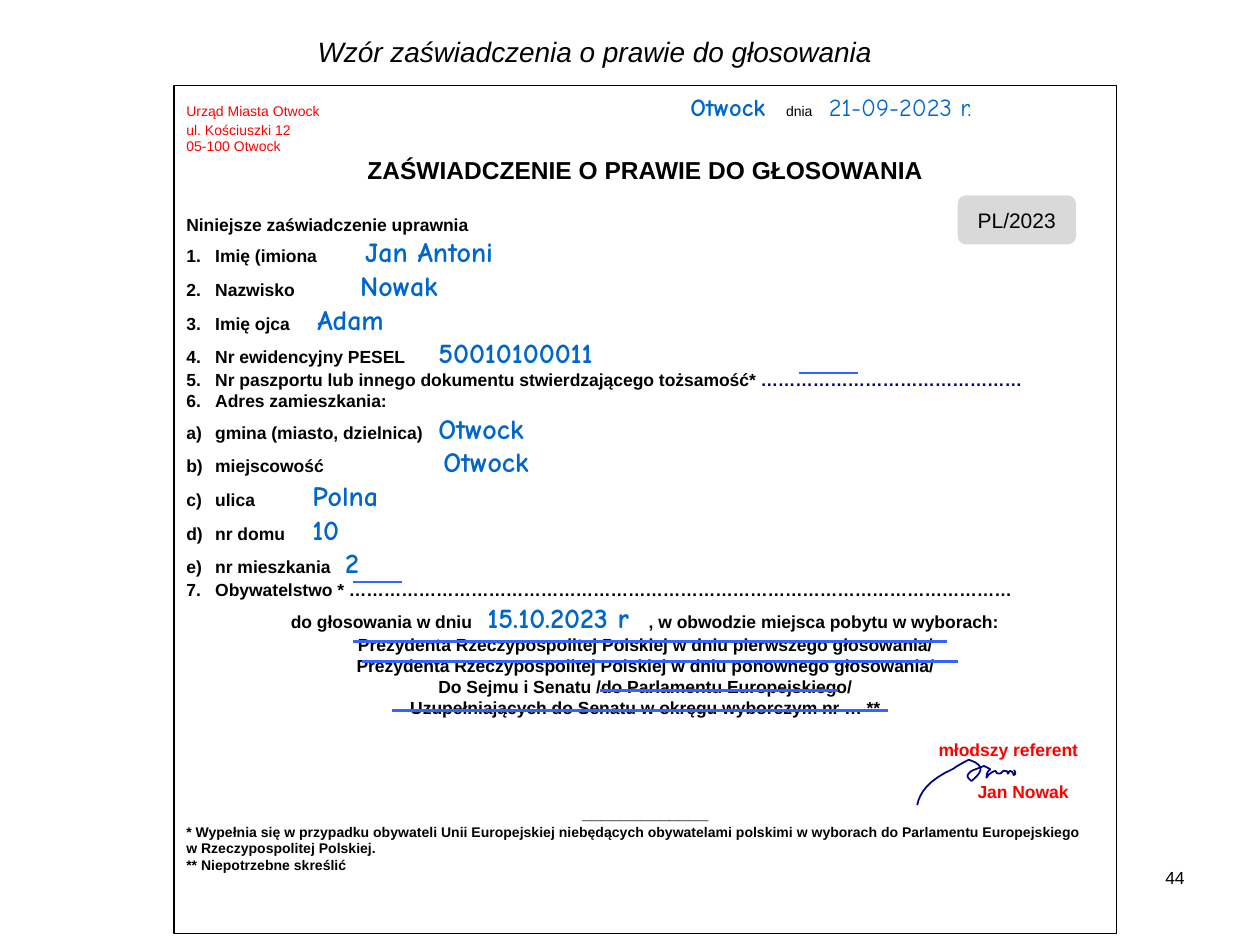
from dataclasses import dataclass

from lxml import etree
from pptx import Presentation
from pptx import util as u
from pptx.dml.color import RGBColor
from pptx.enum import shapes, text
from pptx.oxml import ns

BLACK = RGBColor(0x00, 0x00, 0x00)
RED = RGBColor(0xFF, 0x00, 0x00)
HANDWRITING = RGBColor(0x00, 0x66, 0xCC)
DOTS = RGBColor(0x00, 0x00, 0x99)
STRIKE = RGBColor(0x33, 0x66, 0xFF)
INK = RGBColor(0x00, 0x00, 0x80)
GREY = RGBColor(0xD9, 0xD9, 0xD9)
CENTER = text.PP_ALIGN.CENTER
LEFT = text.PP_ALIGN.LEFT
RIGHT = text.PP_ALIGN.RIGHT


@dataclass(frozen=True)
class Style:
    size: float
    color: RGBColor = BLACK
    bold: bool = False
    italic: bool = False
    font: str = "Arial"


@dataclass(frozen=True)
class Line:
    runs: tuple
    align: text.PP_ALIGN = LEFT
    tabs: tuple = ()
    number: str = ""
    start: int = 1
    before: float = 0


@dataclass(frozen=True)
class Strike:
    left: float
    right: float
    y: float
    width: float = 1.5


OFFICE = Style(8, RED)
SMALL = Style(8)
NOTE = Style(8, bold=True)
BODY = Style(10, bold=True)
STAMP = Style(10, RED, bold=True)
PLACE = Style(14, HANDWRITING, bold=True, font="Comic Neue")
DATE = Style(14, HANDWRITING, font="Comic Neue")
ENTRY = Style(16, HANDWRITING, bold=True, font="Comic Neue")
ARABIC, LETTER = "arabicPeriod", "alphaLcParenR"


def entry(number: str, label: str, value: str, tab: float) -> Line:
    return Line(((label + "\t", BODY), (value, ENTRY)), tabs=(tab,), number=number)


def centered(words: str) -> Line:
    return Line(((words, BODY),), CENTER)


CERTIFICATE = [
    Line((("Urząd Miasta Otwock\t", OFFICE), ("Otwock\t", PLACE),
          ("dnia\t", SMALL), ("21-09-2023 r.", DATE)), tabs=(4, 4.76, 5.1)),
    Line((("ul. Kościuszki 12", OFFICE),)),
    Line((("05-100 Otwock", OFFICE),)),
    Line((("ZAŚWIADCZENIE O PRAWIE DO GŁOSOWANIA", Style(14, bold=True)),), CENTER),
    Line((("Niniejsze zaświadczenie uprawnia", BODY),), before=17),
    entry(ARABIC, "Imię (imiona", "Jan Antoni", 1.42),
    entry(ARABIC, "Nazwisko", "Nowak", 1.38),
    entry(ARABIC, "Imię ojca", "Adam", 1.04),
    entry(ARABIC, "Nr ewidencyjny PESEL", "50010100011", 2),
    Line((("Nr paszportu lub innego dokumentu stwierdzającego tożsamość* ", BODY),
          ("…" * 15, Style(10, DOTS, bold=True))), number=ARABIC),
    Line((("Adres zamieszkania:", BODY),), number=ARABIC),
    entry(LETTER, "gmina (miasto, dzielnica)", "Otwock", 2),
    entry(LETTER, "miejscowość", "Otwock", 2.04),
    entry(LETTER, "ulica", "Polna", 1),
    entry(LETTER, "nr domu", "10", 1),
    entry(LETTER, "nr mieszkania", "2", 1.26),
    Line((("Obywatelstwo * " + "…" * 38, BODY),), number=ARABIC, start=7),
    Line((("\tdo głosowania w dniu\t", BODY), ("15.10.2023 r\t", ENTRY),
          (", w obwodzie miejsca pobytu w wyborach:", BODY)), tabs=(0.83, 2.39, 3.67)),
    centered("Prezydenta Rzeczypospolitej Polskiej w dniu pierwszego głosowania/"),
    centered("Prezydenta Rzeczypospolitej Polskiej w dniu ponownego głosowania/"),
    centered("Do Sejmu i Senatu /do Parlamentu Europejskiego/"),
    centered("Uzupełniających do Senatu w okręgu wyborczym nr … **"),
    Line((("\tmłodszy referent", STAMP),), tabs=(5.97,), before=12),
    Line((("\tJan Nowak", STAMP),), tabs=(6.28,), before=12),
    centered("_" * 13),
    Line((("* Wypełnia się w przypadku obywateli Unii Europejskiej niebędących obywatelami "
           "polskimi w wyborach do Parlamentu Europejskiego\nw Rzeczypospolitej Polskiej.",
           NOTE),)),
    Line((("** Niepotrzebne skreślić", NOTE),)),
]

STRIKES = [
    Strike(2.87, 7.6, 5.25),
    Strike(2.8, 7.52, 5.09),
    Strike(3.11, 7.05, 5.64),
    Strike(6.34, 6.81, 2.96, 0.75),
    Strike(2.8, 3.19, 4.62, 0.75),
    Strike(4.76, 6.65, 5.48),
]

SIGNATURE_START = (7.28, 6.39)
SIGNATURE_CURVES = [
    (7.3, 6.29, 7.37, 6.19, 7.57, 6.1), (7.59, 6.08, 7.69, 6.03, 7.69, 6.03),
    (7.84, 6.08, 7.78, 6.14, 7.71, 6.2), (7.68, 6.17, 7.66, 6.16, 7.71, 6.12),
    (7.73, 6.11, 7.81, 6.08, 7.81, 6.08), (7.91, 6.13, 7.83, 6.08, 7.83, 6.17),
    (7.83, 6.18, 7.84, 6.15, 7.86, 6.14), (7.87, 6.13, 7.89, 6.12, 7.9, 6.12),
    (7.91, 6.12, 7.9, 6.14, 7.93, 6.14), (7.96, 6.14, 7.95, 6.11, 7.98, 6.12),
    (8.01, 6.12, 7.99, 6.14, 8, 6.14), (8.01, 6.14, 8, 6.12, 8.02, 6.12),
    (8.05, 6.13, 8.04, 6.16, 8.05, 6.15), (8.07, 6.14, 8.05, 6.12, 8.05, 6.11),
]


def add_runs(paragraph, runs: tuple) -> None:
    for words, style in runs:
        for index, part in enumerate(words.split("\n")):
            if index:
                paragraph.add_line_break()
            run = paragraph.add_run()
            run.text = part
            run.font.name = style.font
            run.font.size = u.Pt(style.size)
            run.font.bold = style.bold
            run.font.italic = style.italic
            run.font.color.rgb = style.color


def write_lines(frame, lines: list[Line]) -> None:
    frame.word_wrap = True
    for index, line in enumerate(lines):
        paragraph = frame.add_paragraph() if index else frame.paragraphs[0]
        properties = paragraph._p.get_or_add_pPr()
        if line.number:
            properties.set("marL", str(u.Inches(0.23)))
            properties.set("indent", str(-u.Inches(0.23)))
            bullet = etree.SubElement(properties, ns.qn("a:buAutoNum"), type=line.number)
            if line.start > 1:
                bullet.set("startAt", str(line.start))
        if line.tabs:
            stops = etree.SubElement(properties, ns.qn("a:tabLst"))
            for stop in line.tabs:
                etree.SubElement(stops, ns.qn("a:tab"), pos=str(u.Inches(stop)), algn="l")
        paragraph.alignment = line.align
        if line.before:
            paragraph.space_before = u.Pt(line.before)
        add_runs(paragraph, line.runs)


def add_label(slide, box: tuple, line: Line):
    label = slide.shapes.add_textbox(*map(u.Inches, box))
    write_lines(label.text_frame, [line])
    return label


def add_box(slide, kind, box: tuple, lines: list[Line], anchor):
    shape = slide.shapes.add_shape(kind, *map(u.Inches, box))
    shape.shadow.inherit = False
    shape.fill.background()
    shape.line.fill.background()
    shape.text_frame.vertical_anchor = anchor
    write_lines(shape.text_frame, lines)
    return shape


def add_strike(slide, strike: Strike) -> None:
    ends = map(u.Inches, (strike.left, strike.y, strike.right, strike.y))
    connector = slide.shapes.add_connector(shapes.MSO_CONNECTOR.STRAIGHT, *ends)
    connector.line.color.rgb = STRIKE
    connector.line.width = u.Pt(strike.width)
    etree.SubElement(connector._element.spPr, ns.qn("a:effectLst"))


def curve_points(start: tuple, curve: tuple, steps: int = 8) -> list[tuple]:
    controls = (start, curve[:2], curve[2:4], curve[4:])
    points = []
    for step in range(1, steps + 1):
        t = step / steps
        weights = ((1 - t) ** 3, 3 * t * (1 - t) ** 2, 3 * t * t * (1 - t), t ** 3)
        points.append(tuple(sum(w * c[axis] for w, c in zip(weights, controls))
                            for axis in (0, 1)))
    return points


def add_signature(slide) -> None:
    points = [SIGNATURE_START]
    for curve in SIGNATURE_CURVES:
        points += curve_points(points[-1], curve)
    outline = [(u.Inches(x), u.Inches(y)) for x, y in points]
    builder = slide.shapes.build_freeform(*outline[0])
    builder.add_line_segments(outline[1:], close=False)
    shape = builder.convert_to_shape()
    shape.shadow.inherit = False
    shape.fill.background()
    shape.line.color.rgb = INK
    shape.line.width = u.Pt(1)


def main() -> None:
    presentation = Presentation()
    presentation.slide_width, presentation.slide_height = u.Inches(10), u.Inches(7.5)
    slide = presentation.slides.add_slide(presentation.slide_layouts[6])
    add_label(slide, (9.02, 6.83, 0.48, 0.52), Line((("44", Style(10)),), RIGHT))
    title = Line((("Wzór zaświadczenia o prawie do głosowania", Style(16, italic=True)),), CENTER)
    heading = add_label(slide, (2.24, 0.28, 4.96, 0.39), title)
    heading.text_frame.paragraphs[0].line_spacing = 0.8
    form = add_box(slide, shapes.MSO_SHAPE.RECTANGLE, (1.38, 0.68, 7.48, 6.73),
                   CERTIFICATE, text.MSO_ANCHOR.TOP)
    form.line.color.rgb = BLACK
    form.line.width = u.Pt(0.75)
    for strike in STRIKES:
        add_strike(slide, strike)
    add_signature(slide)
    series = add_box(slide, shapes.MSO_SHAPE.ROUNDED_RECTANGLE, (7.6, 1.55, 0.94, 0.39),
                     [Line((("PL/2023", Style(12)),), CENTER)], text.MSO_ANCHOR.MIDDLE)
    series.fill.solid()
    series.fill.fore_color.rgb = GREY
    presentation.save("out.pptx")


if __name__ == "__main__":
    main()
